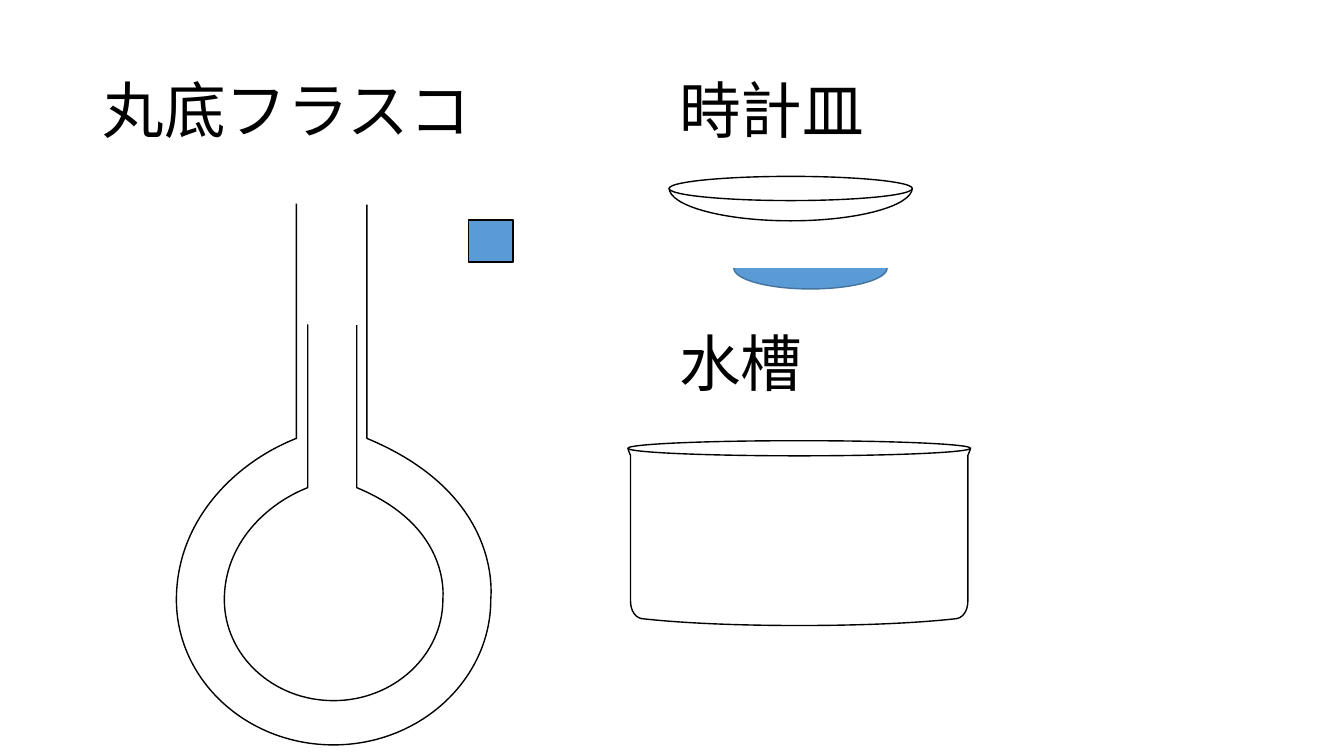
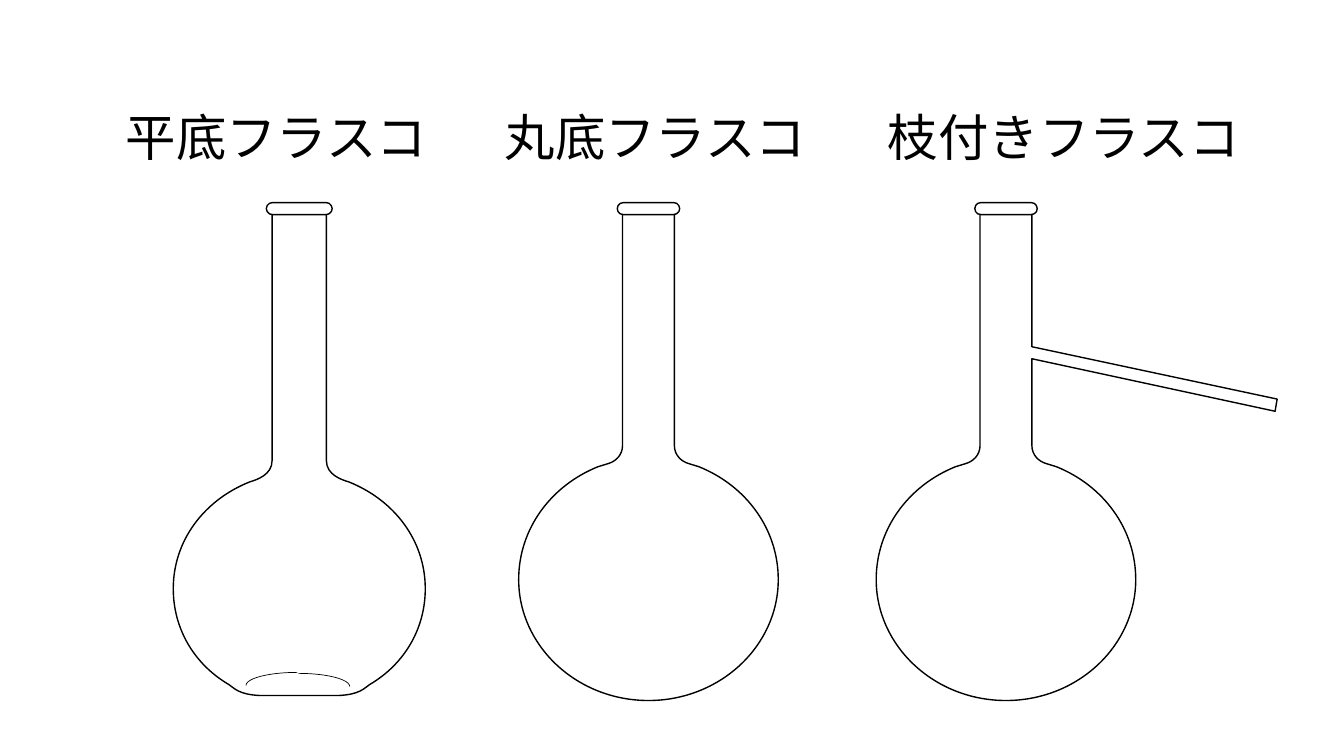
from pptx import Presentation
from pptx.dml.color import RGBColor
from pptx.enum.shapes import MSO_SHAPE
from pptx.enum.text import MSO_ANCHOR
from pptx.oxml.ns import qn
from pptx.util import Pt
from lxml import etree

OVAL, RECT = MSO_SHAPE.OVAL, MSO_SHAPE.RECTANGLE
PILL, ARC = MSO_SHAPE.ROUNDED_RECTANGLE, MSO_SHAPE.ARC
MIDDLE = MSO_ANCHOR.MIDDLE

THEME = {
    "font": "Noto Sans CJK JP",
    "ink": RGBColor(0x00, 0x00, 0x00),
    "title": Pt(44),
    "label": Pt(36),
    "looks": {
        "outline": {"fill": None, "line": "000000", "width": 1},
        "dish": {"fill": "FFFFFF", "line": "000000", "width": 1},
        "block": {"fill": "5B9BD5", "line": "000000", "width": 1},
        "water": {"fill": "5B9BD5", "line": "43739E", "width": 1},
        "glass": {"fill": "FFFFFF", "alpha": 60, "line": "000000", "width": 1},
        "base": {"fill": "FFFFFF", "alpha": 60, "line": "000000", "width": 0.5},
    },
}


def style(sp, name):
    look = THEME["looks"][name]
    sp.shadow.inherit = False
    sp.line.color.rgb = RGBColor.from_string(look["line"])
    sp.line.width = Pt(look["width"])
    if look["fill"] is None:
        sp.fill.background()
        return
    sp.fill.solid()
    sp.fill.fore_color.rgb = RGBColor.from_string(look["fill"])
    if "alpha" in look:
        clr = sp.element.spPr.find(qn("a:solidFill"))[0]
        etree.SubElement(clr, qn("a:alpha")).set("val", str(look["alpha"] * 1000))


def draw(s, cx, cy, segs, look, percent=100, mirror=True, arm=()):
    segs = list(segs)
    if mirror:
        pairs = list(zip(segs, segs[1:]))
        for prev, seg in reversed(pairs):
            back = seg[-2::-1] + prev[-1:] if len(seg) > 1 else prev[-1:]
            segs.append([(-x, y) for x, y in back])
    segs[1:1] = arm
    k = percent / 100
    segs = [[(Pt(cx + k * x), Pt(cy + k * y)) for x, y in seg] for seg in segs]
    fb = s.shapes.build_freeform(*segs[0][0], scale=1.0)
    fb.add_line_segments([seg[-1] for seg in segs[1:]], close=False)
    sp = fb.convert_to_shape()
    for ln, seg in zip(list(sp.element.iter(qn("a:lnTo"))), segs[1:]):
        if len(seg) == 3:
            curve = etree.Element(qn("a:cubicBezTo"))
            for x, y in seg:
                pt = etree.SubElement(curve, qn("a:pt"))
                pt.set("x", str(x - sp.left))
                pt.set("y", str(y - sp.top))
            ln.getparent().replace(ln, curve)
    style(sp, look)


prs = Presentation()
prs.slide_width, prs.slide_height = Pt(960), Pt(540)
blank = prs.slide_layouts[6]
tools, flasks = [prs.slides.add_slide(blank) for _ in range(2)]

wide_flask = [
    [(23.8, -282.2)],
    [(23.8, -115.2)],
    [(124.6, -73.4), (111.6, 2.2), (112.3, 0)],
    [(112.3, 56.9), (61.9, 103.7), (0, 103.7)],
    [(-62.6, 103.7), (-112.3, 56.9), (-112.3, 0)],
    [(-112.3, -57.6), (-69.1, -98.6), (-26.6, -115.2)],
    [(-26.6, -283)],
]
bowl = [[(86.9, 0)], [(86.9, 13), (47.9, 23.6), (0, 23.6)]]
tank = [
    [(122.4, 0)],
    [(120.5, 5)],
    [(120.5, 108.7)],
    [(120.5, 115.9), (117, 121.7), (110.5, 121.7)],
    [(80, 125), (40, 126.4), (0, 126.4)],
]
flat_flask = [
    [(19.4, -267.8)],
    [(19.4, -91.4)],
    [(19.4, -81.4), (30.2, -77.8), (35.3, -76.3)],
    [(67.7, -63.4), (90, -34.6), (90, 0)],
    [(90, 28.8), (74.9, 54), (50.4, 68.4)],
    [(46.1, 71.3), (43.2, 75.6), (28, 76.3)],
    [(0, 76.3)],
]
round_flask = [
    [(18.5, -261.4)],
    [(18.5, -95.8)],
    [(18.5, -88.6), (23.8, -84.2), (28.8, -82.8)],
    [(36, -80.6)],
    [(69.8, -67), (92.7, -36), (92.7, 0)],
    [(92.7, 47.5), (51.1, 86.4), (0, 86.4)],
]
side_arm = [[(18.5, -166.3)], [(193.7, -128.9)], [(192.2, -120.2)], [(18.5, -157.7)]]

for percent in (100, 69.5):
    draw(tools, 238.3, 428.4, wide_flask, "outline", percent, mirror=False)
draw(tools, 564.8, 134.1, bowl, "outline")
draw(tools, 578.9, 191.5, bowl, "water", percent=63)
draw(tools, 570.9, 320.4, tank, "outline")
draw(flasks, 213.8, 420.5, flat_flask, "glass")
draw(flasks, 463.2, 414, round_flask, "glass")
draw(flasks, 718.6, 414, round_flask, "glass", arm=side_arm)

lip_top, lip_height = 144.7, 8.6
parts = [
    (tools, OVAL, 477.9, 126, 173.8, 17.3, "dish"),
    (tools, OVAL, 448.5, 314.8, 244.8, 10.8, "outline"),
    (tools, RECT, 334.8, 157, 31.7, 30.2, "block"),
    (flasks, ARC, 176.4, 481, 73.4, 18.7, "base"),
    (flasks, ARC, 175.7, 480.3, 73.4, 18.7, "base"),
]
for cx, width in ((213.8, 47), (463.2, 44.6), (718.6, 44.6)):
    parts.append((flasks, PILL, cx - width / 2, lip_top, width, lip_height, "glass"))

arcs = []
for s, kind, x, y, w, h, look in parts:
    sp = s.shapes.add_shape(kind, Pt(x), Pt(y), Pt(w), Pt(h))
    style(sp, look)
    if kind == PILL:
        sp.adjustments[0] = 0.5
    if kind == ARC:
        arcs.append(sp)
arcs[1].element.spPr.find(qn("a:xfrm")).set("flipH", "1")

labels = [
    (tools, 66.2, 28.8, "title", "丸底フラスコ"),
    (tools, 478.1, 28.8, "title", "時計皿"),
    (tools, 478.1, 209.5, "title", "水槽"),
    (flasks, 82.8, 48.2, "label", "平底フラスコ"),
    (flasks, 353.5, 48.2, "label", "丸底フラスコ"),
    (flasks, 627.1, 48.2, "label", "枝付きフラスコ"),
]
for s, x, y, size, text in labels:
    tf = s.shapes.add_textbox(Pt(x), Pt(y), Pt(312.5), Pt(104.4)).text_frame
    tf.word_wrap = True
    tf.vertical_anchor = MIDDLE
    p = tf.paragraphs[0]
    p.line_spacing = 0.9
    r = p.add_run()
    r.text = text
    for key, value in {"name": THEME["font"], "size": THEME[size]}.items():
        setattr(r.font, key, value)
    r.font.color.rgb = THEME["ink"]
    ea = etree.SubElement(r.font._element, qn("a:ea"))
    ea.set("typeface", THEME["font"])

prs.save("out.pptx")
